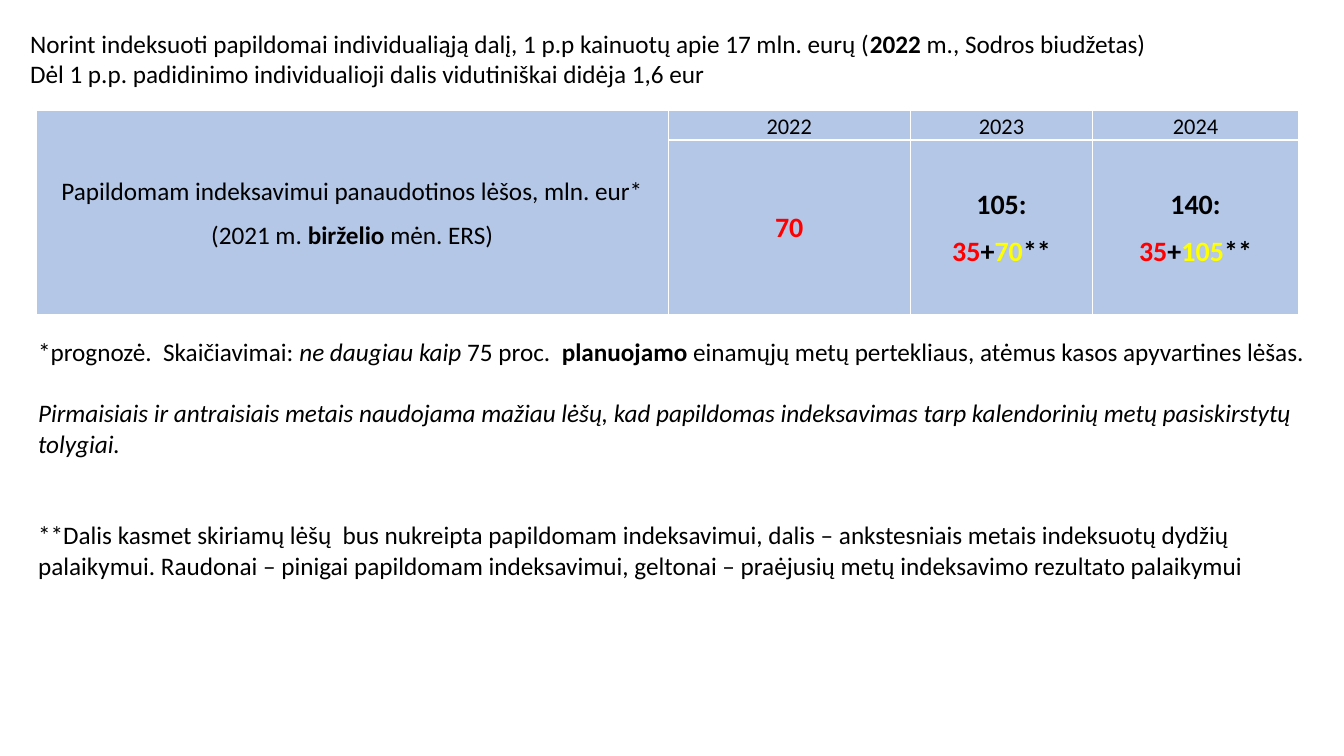
from lxml import etree
from pptx import Presentation
from pptx.dml.color import RGBColor
from pptx.enum.text import MSO_ANCHOR as Anchor, PP_ALIGN as Align
from pptx.oxml.ns import qn
from pptx.util import Cm, Pt

FONT = "Calibri"
BLACK, WHITE, RED, YELLOW, CELL_BLUE = "000000", "FFFFFF", "FF0000", "FFFF00", "B4C7E7"
BOLD, ITALIC = {"bold": True}, {"italic": True}
LINE = 22  # height of one 18 pt line, in points

INTRO = [
    ([("Norint indeksuoti papildomai individualiąją dalį, 1 p.p kainuotų apie 17 mln. eurų (", {}),
      ("2022", BOLD), (" m., Sodros biudžetas)", {})], 0),
    ([("Dėl 1 p.p. padidinimo individualioji dalis vidutiniškai didėja 1,6 eur", {})], 0),
]
NOTES = [
    ([("*prognozė.  Skaičiavimai: ", {}), ("ne daugiau kaip", ITALIC), (" 75 proc.  ", {}),
      ("planuojamo", BOLD),
      (" einamųjų metų pertekliaus, atėmus kasos apyvartines lėšas.", {})], LINE),
    ([("Pirmaisiais ir antraisiais metais naudojama mažiau lėšų, kad papildomas indeksavimas "
       "tarp kalendorinių metų pasiskirstytų tolygiai.", ITALIC)], 2 * LINE),
    ([("**Dalis kasmet skiriamų lėšų  bus nukreipta papildomam indeksavimui, dalis – "
       "ankstesniais metais indeksuotų dydžių palaikymui. Raudonai – pinigai papildomam "
       "indeksavimui, geltonai – praėjusių metų indeksavimo rezultato palaikymui", {})], 0),
]
FUNDS_LABEL = [
    [("Papildomam indeksavimui panaudotinos lėšos, mln. eur*", {})],
    [("(2021 m. ", {}), ("birželio", BOLD), (" mėn. ERS)", {})],
]


def split_amount(total, indexing, upkeep):
    """Paragraphs for a yearly total and its red and yellow parts."""
    parts = [(indexing, RED), ("+", BLACK), (upkeep, YELLOW), ("**", BLACK)]
    return [[(total, BOLD)], [(text, {"bold": True, "color": color}) for text, color in parts]]


YEARS = [
    ("2022", [[("70", {"bold": True, "color": RED})]]),
    ("2023", split_amount("105:", "35", "70")),
    ("2024", split_amount("140:", "35", "105")),
]
COLUMN_WIDTHS = [15.93, 6.1, 4.6, 5.18]
ROW_HEIGHTS = [0.74, 4.39]


def rgb(color):
    return RGBColor.from_string(color)


def add_runs(paragraph, runs, size):
    for text, style in runs:
        run = paragraph.add_run()
        run.text = text
        run.font.name = FONT
        run.font.size = Pt(size)
        run.font.bold = style.get("bold", False)
        run.font.italic = style.get("italic", False)
        run.font.color.rgb = rgb(style.get("color", BLACK))


def paragraphs_of(frame, count):
    return [frame.paragraphs[0]] + [frame.add_paragraph() for _ in range(count - 1)]


def add_text(slide, box, content):
    frame = slide.shapes.add_textbox(*map(Cm, box)).text_frame
    frame.word_wrap = True
    for paragraph, (runs, space_after) in zip(paragraphs_of(frame, len(content)), content):
        paragraph.space_after = Pt(space_after)
        add_runs(paragraph, runs, 18)


def add_borders(cell):
    properties = cell._tc.get_or_add_tcPr()
    for position, side in enumerate(("a:lnL", "a:lnR", "a:lnT", "a:lnB")):
        line = etree.Element(qn(side), w=str(Pt(1)))
        fill = etree.SubElement(line, qn("a:solidFill"))
        etree.SubElement(fill, qn("a:srgbClr"), val=WHITE)
        properties.insert(position, line)


def fill_cell(cell, content, size):
    cell.vertical_anchor = Anchor.MIDDLE
    cell.margin_left = cell.margin_right = Cm(0.18)
    cell.margin_top = cell.margin_bottom = 0
    for paragraph, runs in zip(paragraphs_of(cell.text_frame, len(content)), content):
        paragraph.alignment = Align.CENTER
        paragraph.line_spacing = 1.07
        paragraph.space_after = Pt(8)
        add_runs(paragraph, runs, size)


def add_funds_table(slide, left, top):
    table = slide.shapes.add_table(
        len(ROW_HEIGHTS), len(COLUMN_WIDTHS), Cm(left), Cm(top),
        Cm(sum(COLUMN_WIDTHS)), Cm(sum(ROW_HEIGHTS))).table
    table.first_row = table.horz_banding = False
    for column, width in zip(table.columns, COLUMN_WIDTHS):
        column.width = Cm(width)
    for row, height in zip(table.rows, ROW_HEIGHTS):
        row.height = Cm(height)
    for cell in table.iter_cells():
        cell.fill.solid()
        cell.fill.fore_color.rgb = rgb(CELL_BLUE)
        add_borders(cell)
    table.cell(0, 0).merge(table.cell(1, 0))
    fill_cell(table.cell(0, 0), FUNDS_LABEL, 18)
    for column, (year, amount) in enumerate(YEARS, start=1):
        fill_cell(table.cell(0, column), [[(year, {})]], 16)
        fill_cell(table.cell(1, column), amount, 20)


def main():
    deck = Presentation()
    deck.slide_width, deck.slide_height = Cm(33.87), Cm(19.05)
    slide = deck.slides.add_slide(deck.slide_layouts[6])
    add_text(slide, (0.51, 0.58, 31.01, 3.33), INTRO)
    add_text(slide, (0.71, 8.36, 32.74, 8.71), NOTES)
    add_funds_table(slide, 0.91, 2.79)
    deck.save("out.pptx")


if __name__ == "__main__":
    main()
